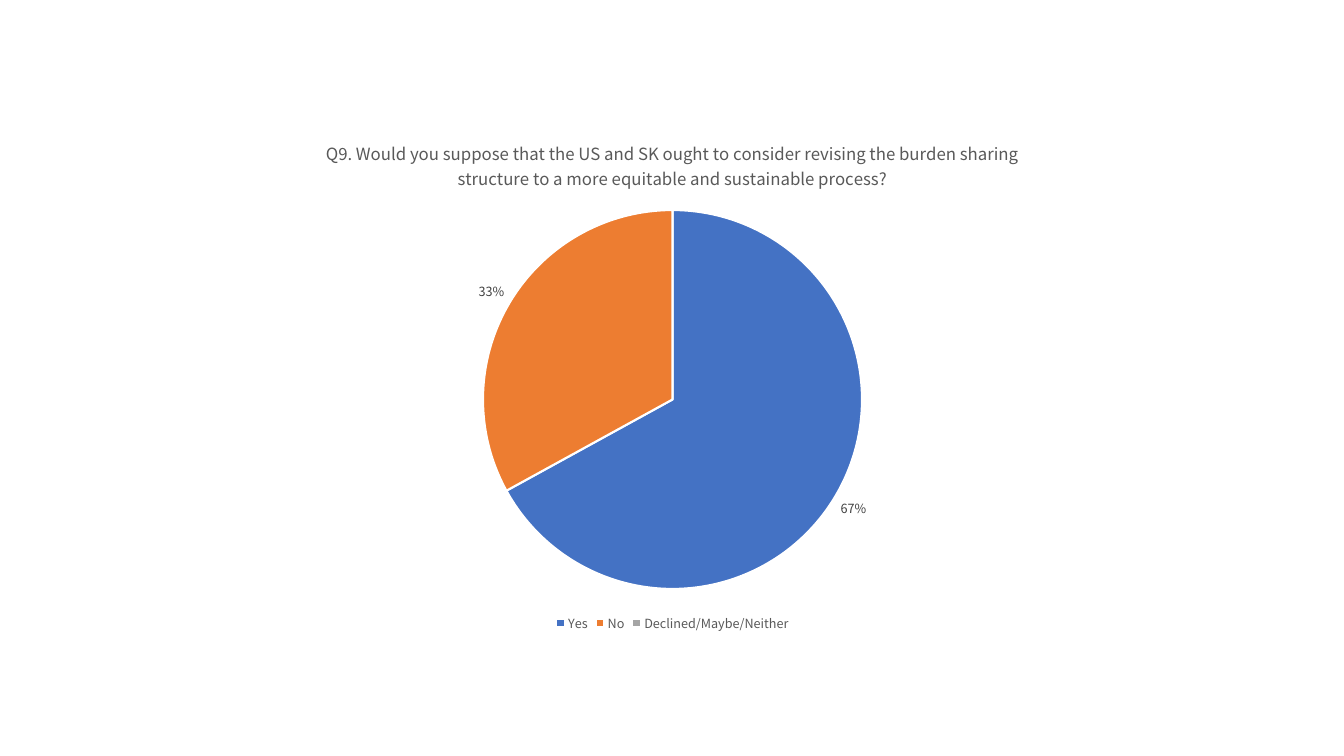
from dataclasses import dataclass

from lxml.etree import SubElement
from pptx import Presentation
from pptx.chart.chart import Chart
from pptx.chart.data import CategoryChartData
from pptx.dml.color import RGBColor
from pptx.enum.chart import XL_CHART_TYPE, XL_LABEL_POSITION, XL_LEGEND_POSITION
from pptx.oxml.ns import qn
from pptx.text.text import Font
from pptx.util import Inches, Pt

COLORS = {
    "blue": "4472C4",
    "orange": "ED7D31",
    "gray": "A5A5A5",
    "border": "FFFFFF",
    "text": "595959",
    "label": "404040",
    "base": "000000",
}
FONT = "Noto Sans CJK KR"
QUESTION = (
    "Q9. Would you suppose that the US and SK ought to consider revising the "
    "burden sharing structure to a more equitable and sustainable process?"
)


@dataclass
class Answer:
    name: str
    share: float
    color: str


ANSWERS = [
    Answer("Yes", 0.67, "blue"),
    Answer("No", 0.33, "orange"),
    Answer("Declined/Maybe/Neither", 0, "gray"),
]


def rgb(name: str) -> RGBColor:
    return RGBColor.from_string(COLORS[name])


def set_font(font: Font, size: float, color: str) -> None:
    formats = {"name": FONT, "size": Pt(size), "bold": False}
    for attr, value in formats.items():
        setattr(font, attr, value)
    font.color.rgb = rgb(color)


def add_title(chart: Chart) -> None:
    chart.has_title = True
    chart.chart_title.include_in_layout = False
    p = chart.chart_title.text_frame.paragraphs[0]
    r = p.add_run()
    r.text = QUESTION
    set_font(r.font, 12, "text")


def add_legend(chart: Chart) -> None:
    chart.has_legend = True
    formats = {"position": XL_LEGEND_POSITION.BOTTOM, "include_in_layout": False}
    for attr, value in formats.items():
        setattr(chart.legend, attr, value)
    set_font(chart.legend.font, 9, "text")


def add_labels(chart: Chart) -> None:
    labels = chart.plots[0].series[0].data_labels
    formats = {
        "show_value": True,
        "show_percentage": False,
        "number_format": "0%",
        "number_format_is_linked": False,
        "position": XL_LABEL_POSITION.OUTSIDE_END,
    }
    for attr, value in formats.items():
        setattr(labels, attr, value)
    set_font(labels.font, 9, "label")

    # Empty slices carry no label
    empty = [i for i, answer in enumerate(ANSWERS) if not answer.share]
    for position, i in enumerate(empty):
        label = labels._element.makeelement(qn("c:dLbl"))
        SubElement(label, qn("c:idx")).set("val", str(i))
        SubElement(label, qn("c:delete")).set("val", "1")
        labels._element.insert(position, label)


def color_slices(chart: Chart) -> None:
    plot = chart.plots[0]
    plot.vary_by_categories = True
    for i, answer in enumerate(ANSWERS):
        slice_format = plot.series[0].points[i].format
        slice_format.fill.solid()
        slice_format.fill.fore_color.rgb = rgb(answer.color)
        slice_format.line.color.rgb = rgb("border")
        slice_format.line.width = Pt(1.5)


def main() -> None:
    prs = Presentation()
    prs.slide_width, prs.slide_height = Inches(13.33), Inches(7.5)
    s = prs.slides.add_slide(prs.slide_layouts[6])

    # Survey answers
    data = CategoryChartData(number_format="0%")
    data.categories = [answer.name for answer in ANSWERS]
    data.add_series(QUESTION, [answer.share for answer in ANSWERS])

    # Pie chart
    box = [Inches(v) for v in (2.14, 1.19, 9.06, 5.12)]
    chart = s.shapes.add_chart(XL_CHART_TYPE.PIE, *box, data).chart
    set_font(chart.font, 10, "base")
    add_title(chart)
    add_legend(chart)
    color_slices(chart)
    add_labels(chart)

    prs.save("out.pptx")


if __name__ == "__main__":
    main()
